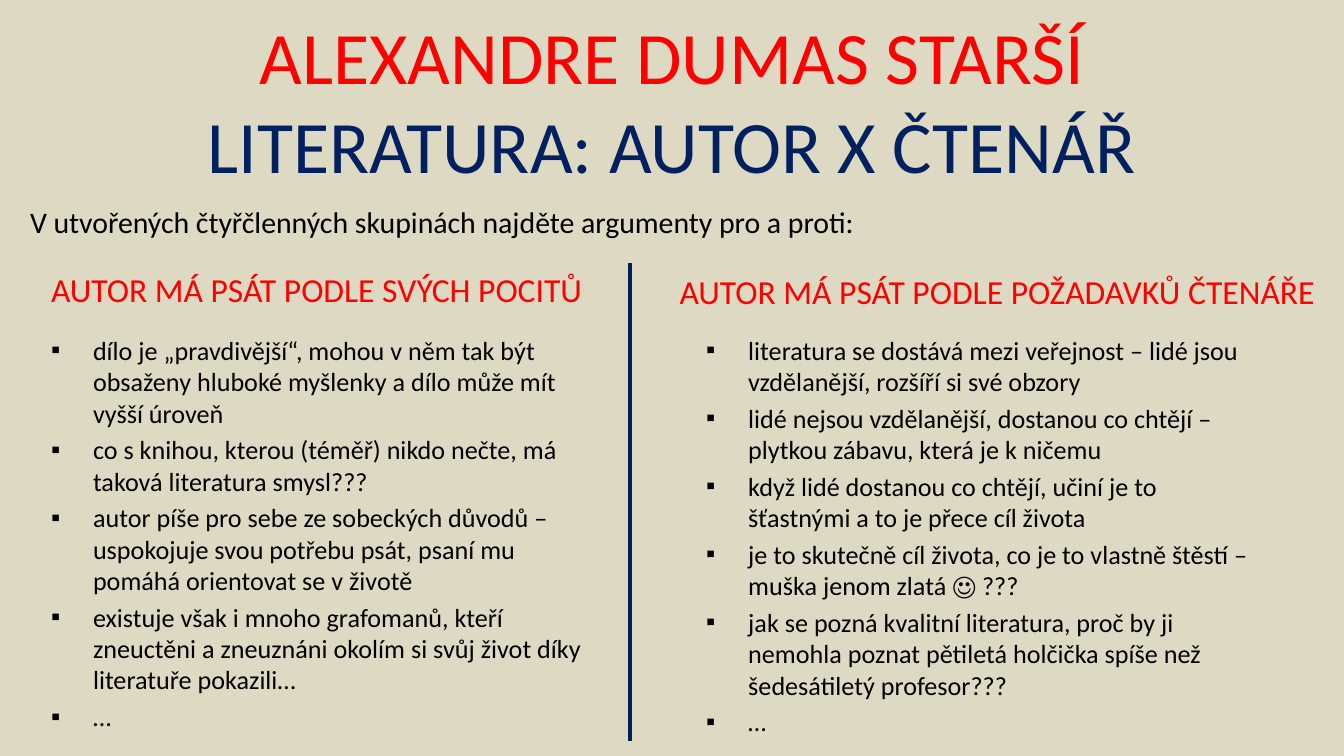
"""Build a slide weighing two views of what an author should write."""
from itertools import cycle
from lxml.etree import SubElement
from pptx import Presentation
from pptx.dml.color import RGBColor
from pptx.enum.shapes import MSO_CONNECTOR, MSO_SHAPE
from pptx.enum.text import MSO_ANCHOR, PP_ALIGN
from pptx.oxml.ns import qn
from pptx.util import Pt

PX = 9525
WIDE, HIGH = 960, 540
SAND, RED, NAVY, BLACK = "DDD9C3", "FF0000", "002060", "000000"
INDENT = 30

TITLE = "ALEXANDRE DUMAS STARŠÍ\vLITERATURA: AUTOR X ČTENÁŘ"
TASK = "V utvořených čtyřčlenných skupinách najděte argumenty pro a proti:"
SIDES = [
    {
        "head": "AUTOR MÁ PSÁT PODLE SVÝCH POCITŮ",
        "box": (27, 187, 408, 36),
        "left": 27,
        "points": [
            "dílo je „pravdivější“, mohou v něm tak být obsaženy hluboké myšlenky a dílo může mít vyšší úroveň",
            "co s knihou, kterou (téměř) nikdo nečte, má taková literatura smysl???",
            "autor píše pro sebe ze sobeckých důvodů – uspokojuje svou potřebu psát, psaní mu pomáhá orientovat se v životě",
            "existuje však i mnoho grafomanů, kteří zneuctěni a zneuznáni okolím si svůj život díky literatuře pokazili…",
            "…",
        ],
    },
    {
        "head": "AUTOR MÁ PSÁT PODLE POŽADAVKŮ ČTENÁŘE",
        "box": (476, 189, 484, 36),
        "left": 495,
        "points": [
            "literatura se dostává mezi veřejnost – lidé jsou vzdělanější, rozšíří si své obzory",
            "lidé nejsou vzdělanější, dostanou co chtějí – plytkou zábavu, která je k ničemu",
            "když lidé dostanou co chtějí, učiní je to šťastnými a to je přece cíl života",
            "je to skutečně cíl života, co je to vlastně štěstí – muška jenom zlatá ☺ ???",
            "jak se pozná kvalitní literatura, proč by ji nemohla poznat pětiletá holčička spíše než šedesátiletý profesor???",
            "…",
        ],
    },
]


def color(code):
    return RGBColor.from_string(code)


def scale(*sizes):
    return [size * PX for size in sizes]


def bullet(para):
    props = para._p.get_or_add_pPr()
    props.set("marL", str(INDENT * PX))
    props.set("indent", str(-INDENT * PX))
    SubElement(props, qn("a:buFont")).set("typeface", "Arial")
    SubElement(props, qn("a:buChar")).set("char", "▪")


def write(slide, box, lines, size, inks, gap=0, marked=False, align=PP_ALIGN.LEFT):
    frame = slide.shapes.add_textbox(*scale(*box)).text_frame
    frame.word_wrap = True
    for row, text in enumerate(lines):
        para = frame.add_paragraph() if row else frame.paragraphs[0]
        para.text = text
        para.alignment = align
        if row:
            para.space_before = Pt(gap)
        if marked:
            bullet(para)
        for run, ink in zip(para.runs, cycle(inks)):
            run.font.name, run.font.size = "Calibri", Pt(size)
            run.font.color.rgb = color(ink)
    return frame


def main():
    deck = Presentation()
    deck.slide_width, deck.slide_height = scale(WIDE, HIGH)
    slide = deck.slides.add_slide(deck.slide_layouts[6])

    back = slide.shapes.add_shape(MSO_SHAPE.RECTANGLE, *scale(0, 0, WIDE, HIGH))
    back.shadow.inherit = False
    back.fill.solid()
    back.fill.fore_color.rgb = color(SAND)
    back.line.fill.background()

    title = write(slide, (72, 13, 816, 116), [TITLE], 39.6, [RED, NAVY], align=PP_ALIGN.CENTER)
    title.vertical_anchor = MSO_ANCHOR.MIDDLE
    write(slide, (12, 141, 930, 45), [TASK], 16, [BLACK])

    rule = slide.shapes.add_connector(MSO_CONNECTOR.STRAIGHT, *scale(450, 188, 450, 529))
    rule.line.color.rgb = color(NAVY)
    rule.line.width = Pt(2.5)
    SubElement(rule._element.spPr, qn("a:effectLst"))

    for side in SIDES:
        write(slide, side["box"], [side["head"]], 18, [RED])
        box = side["left"], 234, 408, 285
        write(slide, box, side["points"], 14, [BLACK], gap=2.8, marked=True)

    deck.save("out.pptx")


if __name__ == "__main__":
    main()
